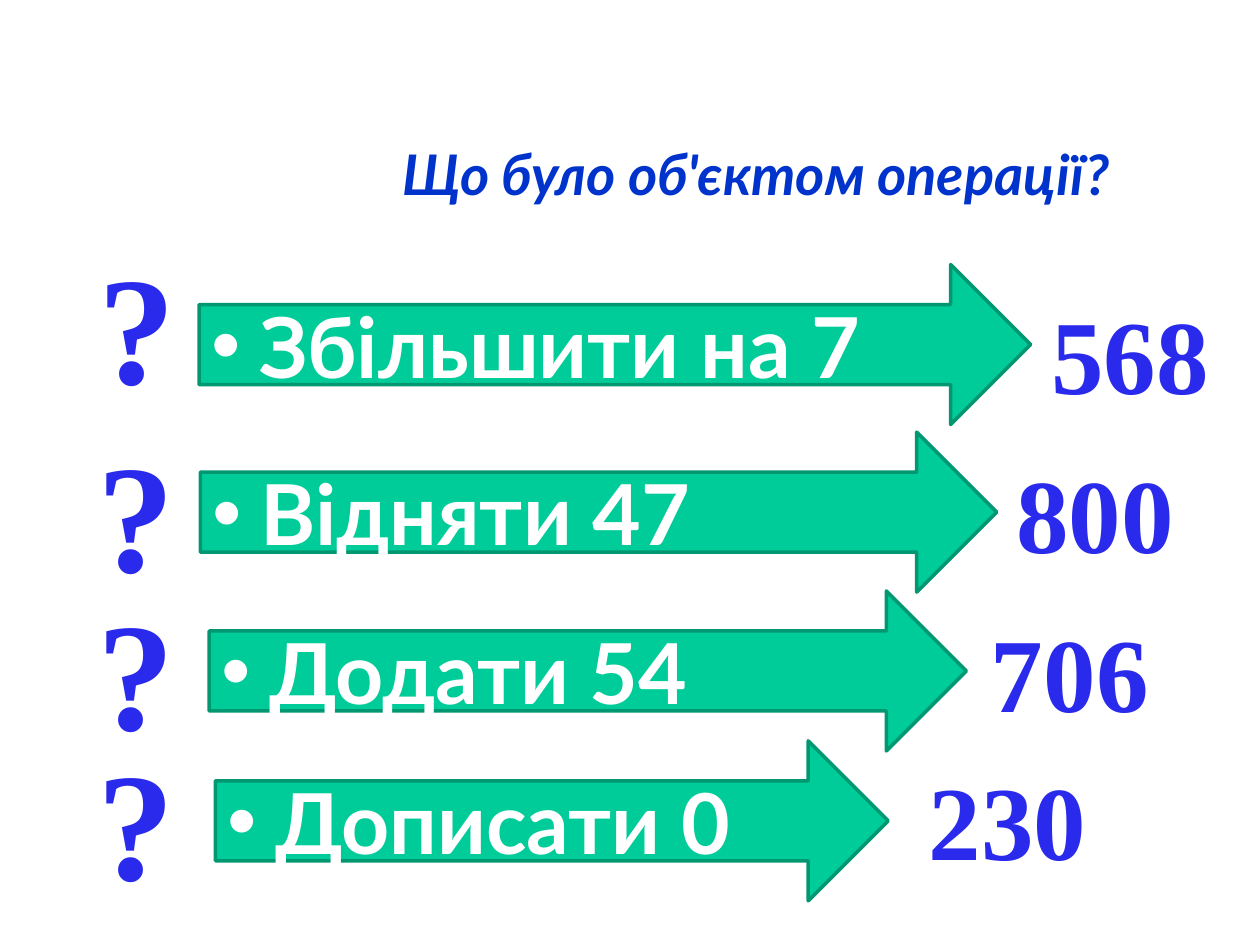
from lxml.etree import SubElement
from pptx import Presentation
from pptx.dml.color import RGBColor
from pptx.enum.shapes import MSO_SHAPE
from pptx.enum.text import MSO_ANCHOR, MSO_AUTO_SIZE, PP_ALIGN
from pptx.oxml.ns import qn
from pptx.util import Inches, Pt

SANS, SERIF = "Lato", "Times New Roman"
TITLE_BLUE, NUMBER_BLUE = "0033CC", "2A2AED"
GREEN, DARK_GREEN, WHITE = "00CC99", "009771", "FFFFFF"


def color(hex_text):
    return RGBColor.from_string(hex_text)


class SlideBuilder:
    def __init__(self, slide):
        self.slide = slide

    def style(self, para, size, font, hex_text, italic=False):
        para.font.size = Pt(size)
        para.font.name = font
        para.font.bold = True
        para.font.italic = italic
        para.font.color.rgb = color(hex_text)

    def text(self, words, place, size, font, hex_text, italic=False,
             anchor=MSO_ANCHOR.TOP, fit=MSO_AUTO_SIZE.SHAPE_TO_FIT_TEXT):
        box = self.slide.shapes.add_textbox(*map(Inches, place))
        frame = box.text_frame
        frame.word_wrap = True
        frame.auto_size = fit
        frame.vertical_anchor = anchor
        para = frame.paragraphs[0]
        para.text = words
        para.alignment = PP_ALIGN.CENTER
        self.style(para, size, font, hex_text, italic)

    def arrow(self, words, place):
        arrow = self.slide.shapes.add_shape(MSO_SHAPE.RIGHT_ARROW, *map(Inches, place))
        arrow.shadow.inherit = False
        arrow.fill.solid()
        arrow.fill.fore_color.rgb = color(GREEN)
        arrow.line.color.rgb = color(DARK_GREEN)
        arrow.line.width = Pt(2)
        frame = arrow.text_frame
        frame.word_wrap = True
        frame.vertical_anchor = MSO_ANCHOR.MIDDLE
        para = frame.paragraphs[0]
        para.text = words
        para.alignment = PP_ALIGN.LEFT
        properties = para._p.get_or_add_pPr()
        properties.set("marL", str(Inches(0.38)))
        properties.set("indent", str(-Inches(0.38)))
        SubElement(properties, qn("a:buFont"), typeface="Arial")
        SubElement(properties, qn("a:buChar"), char="•")
        self.style(para, 48, SANS, WHITE)


def main():
    deck = Presentation()
    deck.slide_width, deck.slide_height = Inches(10), Inches(7.5)
    builder = SlideBuilder(deck.slides.add_slide(deck.slide_layouts[6]))

    # Title
    builder.text("Що було об'єктом операції?", (2.42, 0.75, 7.17, 1.25), 32, SANS,
                 TITLE_BLUE, italic=True, anchor=MSO_ANCHOR.MIDDLE, fit=MSO_AUTO_SIZE.NONE)

    # Rows: question (left, top), operation (left, top, width), result (left, top, width)
    rows = [
        ((0.59, 1.78), "Збільшити на 7", (1.58, 2.1, 6.6), "568", (8.06, 2.25, 1.82)),
        ((0.58, 3.27), "Відняти 47", (1.59, 3.43, 6.32), "800", (7.6, 3.51, 2.18)),
        ((0.58, 4.53), "Додати 54", (1.66, 4.69, 6.01), "706", (7.44, 4.77, 2.1)),
        ((0.58, 5.72), "Дописати 0", (1.71, 5.88, 5.34), "230", (6.97, 5.95, 2.05)),
    ]
    for question_place, operation, arrow_place, result, result_place in rows:
        builder.text("?", (*question_place, 1, 1.58), 88, SERIF, NUMBER_BLUE)
        builder.arrow(operation, (*arrow_place, 1.27))
        builder.text(result, (*result_place, 1.11), 60, SERIF, NUMBER_BLUE)

    deck.save("out.pptx")


if __name__ == "__main__":
    main()
